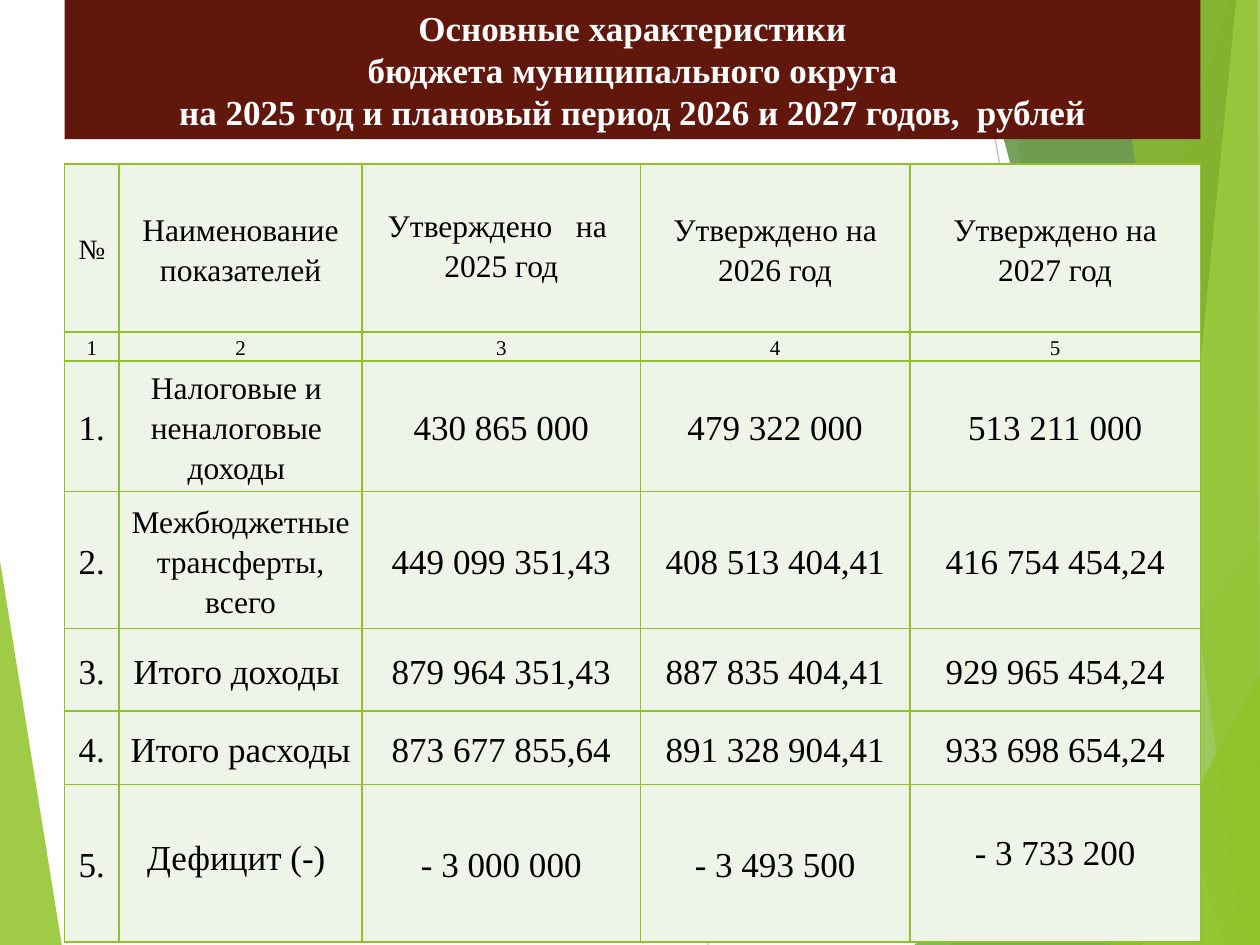
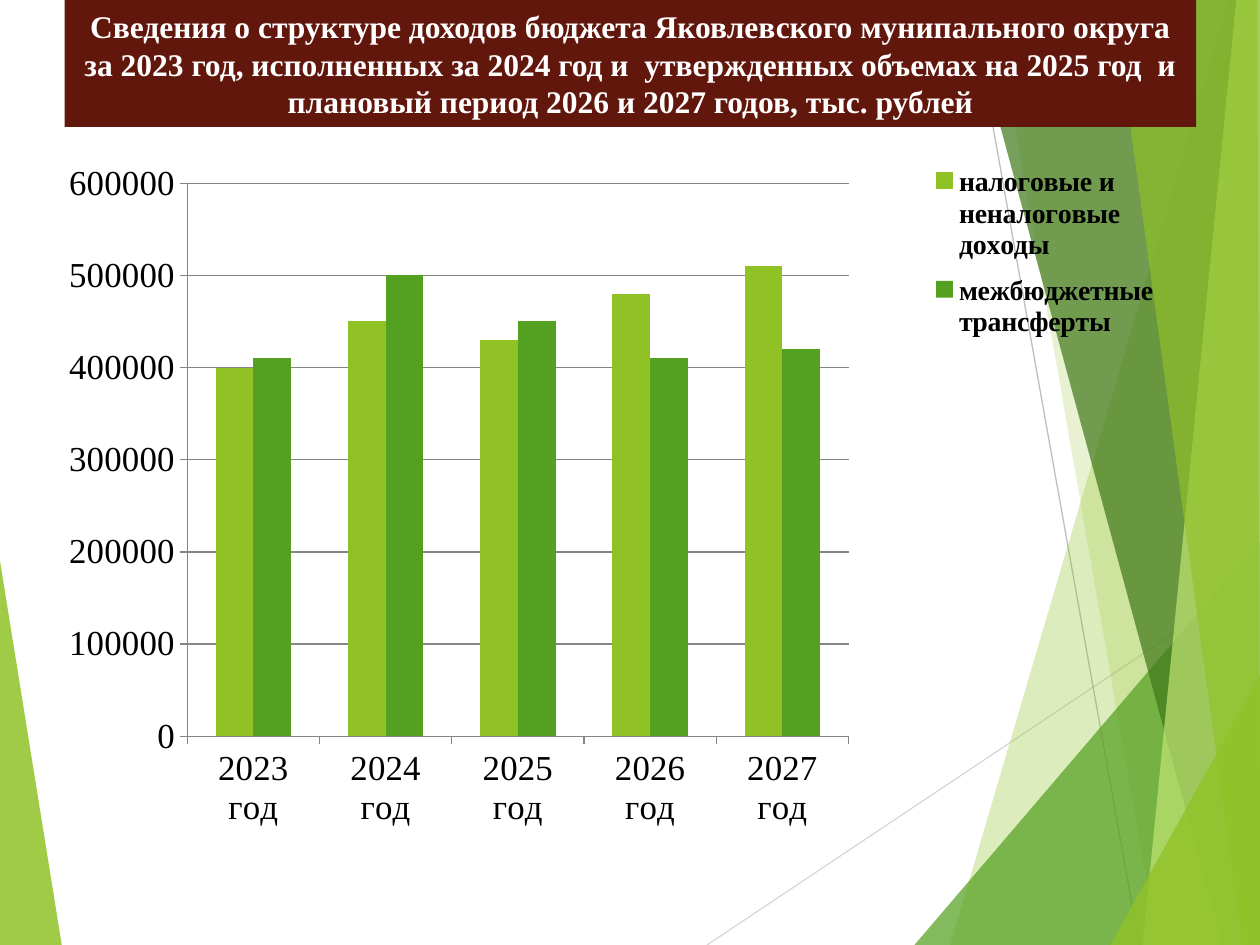
from dataclasses import dataclass

from lxml.etree import SubElement
from pptx import Presentation
from pptx.chart.data import CategoryChartData
from pptx.dml.color import RGBColor
from pptx.enum.chart import XL_CHART_TYPE, XL_LEGEND_POSITION, XL_TICK_MARK
from pptx.enum.shapes import MSO_CONNECTOR
from pptx.enum.text import MSO_ANCHOR, MSO_AUTO_SIZE, PP_ALIGN
from pptx.oxml.ns import qn
from pptx.util import Pt


@dataclass(frozen=True)
class Theme:
    font: str = "Times New Roman"
    # Colours
    black: str = "000000"
    white: str = "FFFFFF"
    band: str = "62170D"
    lime: str = "90C226"
    green: str = "54A021"
    forest: str = "3F7819"
    pale: str = "C0E474"
    cell: str = "EEF4E8"
    grid: str = "868686"
    ray_light: str = "D9D9D9"
    ray_dark: str = "BFBFBF"
    # Type sizes
    big: int = 20
    medium: int = 18
    small: int = 16
    tiny: int = 12


T = Theme()

# Background facets: colour, opacity in percent, corner points
FACETS = [
    (T.lime, 85, [(0, 320.5), (35.3, 540), (0, 540)]),
    (T.lime, 30, [(702, 0), (543, 540), (720, 540), (720, 0)]),
    (T.lime, 20, [(567.5, 0), (661.5, 540), (720, 540), (720, 0)]),
    (T.green, 72, [(522.5, 540), (720, 309), (720, 540)]),
    (T.forest, 70, [(552, 0), (698.5, 540), (720, 540), (720, 0)]),
    (T.pale, 70, [(706.5, 0), (653, 540), (720, 540), (720, 0)]),
    (T.lime, 65, [(636, 0), (710, 540), (720, 540), (718.5, 0)]),
    (T.lime, 80, [(634.5, 540), (720, 386), (720, 540)]),
]
RAYS = [
    (T.ray_light, (404, 540), (720, 329)),
    (T.ray_dark, (554.5, 0), (651, 540)),
]


def rgb(color):
    return RGBColor.from_string(color)


def style_font(font, size, color=T.black, bold=False):
    font.name, font.size, font.bold = T.font, Pt(size), bold
    font.color.rgb = rgb(color)


def write(tf, text, *, size, color=T.black, bold=False, spacing=1.0):
    """Write centred text, one paragraph per line of text."""
    tf.word_wrap = True
    for i, line in enumerate(text.split("\n")):
        p = tf.add_paragraph() if i else tf.paragraphs[0]
        p.alignment = PP_ALIGN.CENTER
        p.line_spacing = spacing
        r = p.add_run()
        r.text = line
        style_font(r.font, size, color, bold)


def set_layout(parent, x, y, w, h, inner=False):
    """Place a chart part by fractions of the chart area."""
    old = parent.find(qn("c:layout"))
    if old is not None:
        parent.remove(old)
    layout = SubElement(parent, qn("c:layout"))
    manual = SubElement(layout, qn("c:manualLayout"))
    values = {"xMode": "edge", "yMode": "edge", "x": x, "y": y, "w": w, "h": h}
    if inner:
        values = {"layoutTarget": "inner", **values}
    for tag, value in values.items():
        SubElement(manual, qn(f"c:{tag}")).set("val", str(value))
    # The layout follows the legend position, or comes first in the plot area
    pos = parent.find(qn("c:legendPos"))
    parent.insert(0 if pos is None else parent.index(pos) + 1, layout)


class Deck:
    def __init__(self, theme):
        self.theme = theme
        self.prs = Presentation()
        self.prs.slide_width, self.prs.slide_height = Pt(720), Pt(540)
        self.s = None

    def new_slide(self, title, box, size):
        self.s = self.prs.slides.add_slide(self.prs.slide_layouts[5])
        self.facet(*FACETS[0])
        for ray in RAYS:
            self.ray(*ray)
        for facet in FACETS[1:]:
            self.facet(*facet)
        self.title(title, box, size)

    def facet(self, color, opacity, points):
        points = [(Pt(x), Pt(y)) for x, y in points]
        builder = self.s.shapes.build_freeform(*points[0], scale=1.0)
        builder.add_line_segments(points[1:], close=True)
        sp = builder.convert_to_shape()
        sp.shadow.inherit = False
        sp.fill.solid()
        sp.fill.fore_color.rgb = rgb(color)
        sp.line.fill.background()
        clr = sp._element.spPr.find(qn("a:solidFill")).find(qn("a:srgbClr"))
        SubElement(clr, qn("a:alpha")).set("val", str(opacity * 1000))

    def ray(self, color, start, end):
        ends = [Pt(v) for v in (*start, *end)]
        line = self.s.shapes.add_connector(MSO_CONNECTOR.STRAIGHT, *ends)
        line.line.color.rgb = rgb(color)
        line.line.width = Pt(0.75)
        SubElement(line._element.spPr, qn("a:effectLst"))

    def title(self, text, box, size):
        sp = self.s.shapes.title
        sp.left, sp.top, sp.width, sp.height = [Pt(v) for v in box]
        sp.fill.solid()
        sp.fill.fore_color.rgb = rgb(self.theme.band)
        tf = sp.text_frame
        tf.auto_size = MSO_AUTO_SIZE.NONE
        tf.vertical_anchor = MSO_ANCHOR.MIDDLE
        write(tf, text, size=size, color=self.theme.white, bold=True)
        # Bring the band in front of the facets
        self.s.shapes._spTree.append(sp._element)

    def table(self, rows, left, top, widths, heights, size_of):
        frame = self.s.shapes.add_table(
            len(rows), len(widths), Pt(left), Pt(top), Pt(sum(widths)), Pt(sum(heights)))
        table = frame.table
        table.first_row = table.horz_banding = False
        for column, width in zip(table.columns, widths):
            column.width = Pt(width)
        for i, (row, height) in enumerate(zip(rows, heights)):
            table.rows[i].height = Pt(height)
            for j, text in enumerate(row):
                self.cell(table.cell(i, j), text, size_of(i, j))
        return table

    def cell(self, cell, text, size):
        cell.margin_left = cell.margin_right = Pt(5.7)
        cell.margin_top = cell.margin_bottom = 0
        cell.vertical_anchor = MSO_ANCHOR.MIDDLE
        write(cell.text_frame, text, size=size, spacing=1.15)
        tcPr = cell._tc.get_or_add_tcPr()
        for side in "LRTB":
            ln = SubElement(tcPr, qn(f"a:ln{side}"), w=str(Pt(1)))
            fill = SubElement(ln, qn("a:solidFill"))
            SubElement(fill, qn("a:srgbClr"), val=self.theme.lime)
        cell.fill.solid()
        cell.fill.fore_color.rgb = rgb(self.theme.cell)

    def column_chart(self, categories, series, box, top_value, step):
        data = CategoryChartData(number_format="General")
        data.categories = categories
        for name, values, _ in series:
            data.add_series(name, values)
        chart = self.s.shapes.add_chart(
            XL_CHART_TYPE.COLUMN_CLUSTERED, *[Pt(v) for v in box], data).chart
        style_font(chart.font, self.theme.medium)
        chart.has_title = False

        # Columns
        plot = chart.plots[0]
        plot.gap_width, plot.overlap = 150, 0
        plot.vary_by_categories = False
        for column, (_, _, color) in zip(plot.series, series):
            column.format.fill.solid()
            column.format.fill.fore_color.rgb = rgb(color)
            column.invert_if_negative = False

        # Axes
        axis = chart.value_axis
        axis.minimum_scale, axis.maximum_scale, axis.major_unit = 0, top_value, step
        axis.has_major_gridlines = True
        axis.major_gridlines.format.line.color.rgb = rgb(self.theme.grid)
        axis.tick_labels.number_format = "General"
        axis.tick_labels.number_format_is_linked = False
        for axis in (chart.value_axis, chart.category_axis):
            axis.major_tick_mark = XL_TICK_MARK.OUTSIDE
            axis.format.line.color.rgb = rgb(self.theme.grid)
            style_font(axis.tick_labels.font, self.theme.big)

        # Legend and placement
        chart.has_legend = True
        chart.legend.position = XL_LEGEND_POSITION.RIGHT
        chart.legend.include_in_layout = False
        style_font(chart.legend.font, self.theme.small, bold=True)
        set_layout(chart.legend._element, 0.75, 0.03, 0.23, 0.26)
        plot_area = chart._chartSpace.chart.plotArea
        set_layout(plot_area, 0.1, 0.07, 0.59, 0.72, inner=True)


def budget_size(row, col):
    """Type size of a cell in the budget table."""
    if row == 0:
        return T.medium if col else T.small
    if row == 1:
        return T.tiny
    return T.medium if col == 1 and row < 4 else T.big


def main():
    deck = Deck(T)

    # Slide 1: main budget figures
    deck.new_slide(
        "Основные характеристики\n"
        "бюджета муниципального округа\n"
        "на 2025 год и плановый период 2026 и 2027 годов,  рублей",
        (37, -0.5, 649, 80), T.big)
    rows = [
        ["№", "Наименование показателей", "Утверждено   на  2025 год",
         "Утверждено на 2026 год", "Утверждено на 2027 год"],
        [str(n) for n in range(1, 6)],
        ["1.", "Налоговые и неналоговые доходы",
         "430 865 000", "479 322 000", "513 211 000"],
        ["2.", "Межбюджетные трансферты, всего",
         "449 099 351,43", "408 513 404,41", "416 754 454,24"],
        ["3.", "Итого доходы", "879 964 351,43", "887 835 404,41", "929 965 454,24"],
        ["4.", "Итого расходы", "873 677 855,64", "891 328 904,41", "933 698 654,24"],
        ["5.", "Дефицит (-)", "- 3 000 000", "- 3 493 500", "- 3 733 200"],
    ]
    table = deck.table(
        rows, 37, 93.6, [31, 139, 159, 154, 166],
        [96.2, 16.5, 74.5, 78.5, 47, 42, 90], budget_size)
    # Text sits a little above the middle in these cells
    for row, col, lift in [(0, 2, 4), (6, 1, 8), (6, 4, 14)]:
        table.cell(row, col).margin_bottom = Pt(lift)
    # These labels sit a little left of the centre
    for row in (2, 4, 6):
        table.cell(row, 1).margin_right = Pt(10.5)

    # Slide 2: structure of revenue
    deck.new_slide(
        "Сведения о структуре доходов бюджета Яковлевского мунипального округа "
        "за 2023 год, исполненных за 2024 год и  утвержденных объемах на 2025 год  "
        "и плановый период 2026 и 2027 годов, тыс. рублей",
        (37, 0, 646.5, 72.5), T.medium)
    deck.column_chart(
        [f"{y} год" for y in range(2023, 2028)],
        [("налоговые и неналоговые доходы",
          (400000, 450000, 430000, 480000, 510000), T.lime),
         ("межбюджетные трансферты",
          (410000, 500000, 450000, 410000, 420000), T.green)],
        (39.5, 74, 644, 439), 600000, 100000)

    deck.prs.save("out.pptx")


if __name__ == "__main__":
    main()
